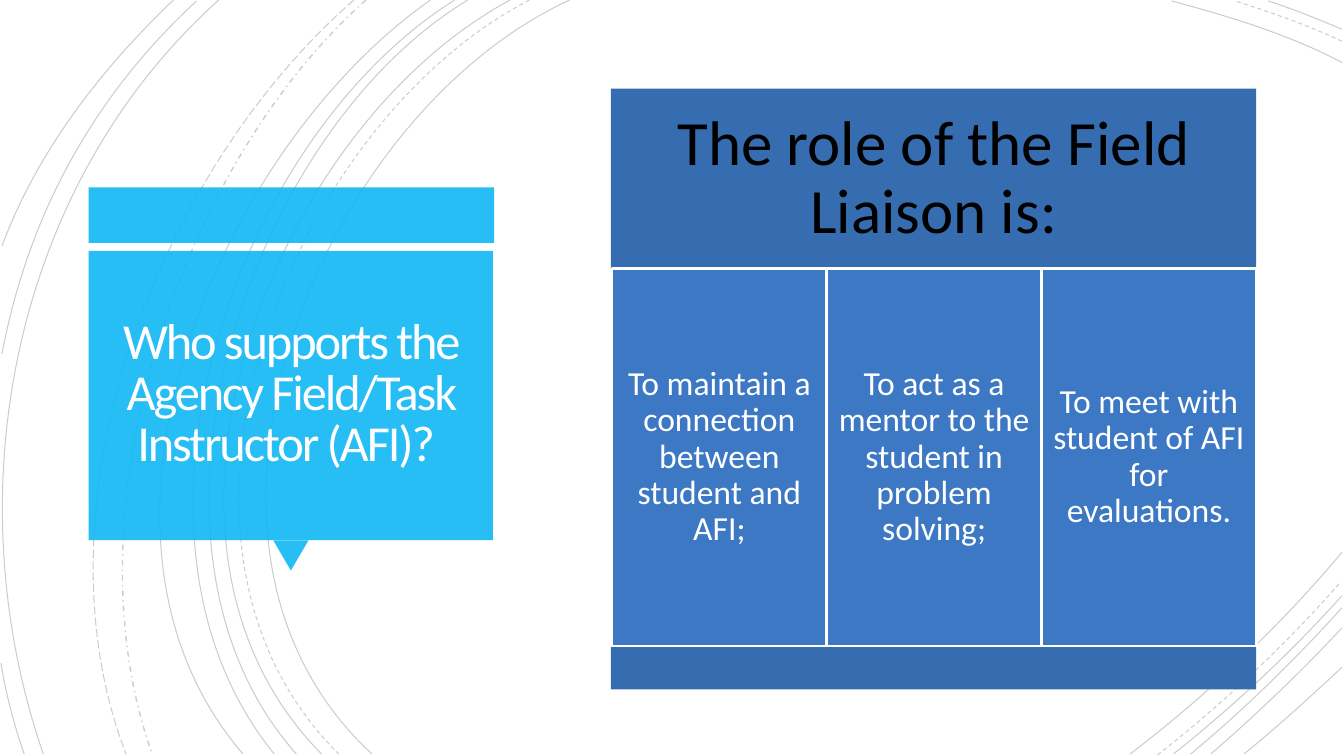
from dataclasses import dataclass

from lxml import etree
from pptx import Presentation
from pptx import util as u
from pptx.dml.color import RGBColor
from pptx.enum import dml, shapes, text
from pptx.oxml.ns import qn

# Grid: cells of one inch, 13.33 columns by 7.5 rows
COLUMNS, ROWS = 13.33, 7.5
CELL = u.Inches(1)
FONT = "Calibri"
COLOURS = {
    "arc": "000000",
    "callout": "10B6F4",
    "question": "FFFEFF",
    "band": "366DB1",
    "task": "3C78C3",
    "heading": "000000",
    "white": "FFFFFF",
}
SOLID, DASH = dml.MSO_LINE.SOLID, dml.MSO_LINE.DASH
LONG_DASH, DASH_DOT = dml.MSO_LINE.LONG_DASH, dml.MSO_LINE.DASH_DOT
RECTANGLE = shapes.MSO_SHAPE.RECTANGLE
TRIANGLE = shapes.MSO_SHAPE.ISOSCELES_TRIANGLE


@dataclass
class Arc:
    """Start, two control points and end, as column and row pairs."""
    points: tuple
    dash: dml.MSO_LINE = SOLID
    weight: float = 0.75


@dataclass
class Panel:
    column: float
    row: float
    columns: float
    rows: float
    fill: str
    kind: shapes.MSO_SHAPE = RECTANGLE
    opacity: int = 100
    rotation: int = 0
    outline: float = 0


@dataclass
class Wording:
    content: str
    size: int
    colour: str
    inset: float
    leading: float = 0.9
    tracking: float = 0


def cells(count: float) -> int:
    return round(count * CELL)


def rgb(name: str) -> RGBColor:
    return RGBColor.from_string(COLOURS[name])


def set_opacity(shape, percent: int) -> None:
    for colour in shape._element.spPr.iter(qn("a:srgbClr")):
        etree.SubElement(colour, qn("a:alpha")).set("val", str(percent * 1000))


def draw_arc(slide, arc: Arc) -> None:
    start, *rest = [(cells(x), cells(y)) for x, y in arc.points]
    builder = slide.shapes.build_freeform(*start)
    builder.add_line_segments(rest, close=False)
    shape = builder.convert_to_shape()
    # Join the three segments into one cubic curve
    segments = list(shape._element.iter(qn("a:lnTo")))
    outline = segments[0].getparent()
    curve = etree.SubElement(outline, qn("a:cubicBezTo"))
    for segment in segments:
        curve.append(segment[0])
        outline.remove(segment)
    shape.shadow.inherit = False
    shape.fill.background()
    shape.line.color.rgb = rgb("arc")
    shape.line.width = u.Pt(arc.weight)
    shape.line.dash_style = arc.dash
    set_opacity(shape, 20)


def draw_panel(slide, panel: Panel):
    shape = slide.shapes.add_shape(
        panel.kind, cells(panel.column), cells(panel.row),
        cells(panel.columns), cells(panel.rows))
    shape.shadow.inherit = False
    shape.rotation = panel.rotation
    shape.fill.solid()
    shape.fill.fore_color.rgb = rgb(panel.fill)
    if panel.opacity < 100:
        set_opacity(shape, panel.opacity)
    if panel.outline:
        shape.line.color.rgb = rgb("white")
        shape.line.width = u.Pt(panel.outline)
    else:
        shape.line.fill.background()
    return shape


def write(shape, wording: Wording) -> None:
    frame = shape.text_frame
    frame.word_wrap = True
    frame.vertical_anchor = text.MSO_ANCHOR.MIDDLE
    frame.margin_left = frame.margin_right = cells(wording.inset)
    frame.margin_top = frame.margin_bottom = cells(wording.inset)
    paragraph = frame.paragraphs[0]
    paragraph.alignment = text.PP_ALIGN.CENTER
    paragraph.line_spacing = wording.leading
    run = paragraph.add_run()
    run.text = wording.content
    run.font.name = FONT
    run.font.size = u.Pt(wording.size)
    run.font.color.rgb = rgb(wording.colour)
    if wording.tracking:
        run._r.get_or_add_rPr().set("spc", str(round(wording.tracking * 100)))


ARCS = [
    # Long arcs sweeping down the left half
    Arc(((5.65, 0), (3.15, 1.15), (1.43, 5.4), (3.69, 7.48))),
    Arc(((5.25, 0), (2.85, 1.25), (1.23, 5.37), (3.36, 7.48)), DASH),
    Arc(((5.06, 0), (2.7, 1.27), (1.1, 5.37), (3.19, 7.48))),
    Arc(((4.64, 0), (2.44, 1.33), (1.1, 5.41), (2.94, 7.48))),
    Arc(((4.51, 0), (2.31, 1.38), (0.97, 5.33), (2.72, 7.48))),
    Arc(((4.27, 0), (2.17, 1.47), (0.53, 5.29), (2.41, 7.48))),
    Arc(((3.63, 0), (1.76, 1.66), (0.65, 5.09), (1.51, 7.48)), DASH_DOT, 1),
    Arc(((3.51, 0), (1.57, 1.69), (0.29, 4.99), (1.25, 7.48)), LONG_DASH),
    Arc(((2.17, 0), (0.11, 1.85), (-0.46, 4.9), (0.43, 7.48))),
    # Short arcs at the left edge
    Arc(((1.95, 0.01), (0.92, 0.96), (0.28, 2.14), (0.02, 3.51))),
    Arc(((0.01, 6.58), (0.06, 6.89), (0.14, 7.19), (0.24, 7.48))),
    Arc(((1.72, 0), (1, 0.69), (0.37, 1.5), (0.02, 2.44))),
    # Top right corner
    Arc(((13.31, 0.62), (12.78, 0.34), (12.18, 0.16), (11.62, 0.01))),
    Arc(((13.31, 0.41), (12.97, 0.25), (12.6, 0.12), (12.25, 0.01)), DASH),
    Arc(((13.31, 0.29), (13.07, 0.19), (12.83, 0.09), (12.58, 0.01))),
    # Bottom right corner
    Arc(((11.21, 7.48), (11.97, 6.9), (12.69, 6.22), (13.31, 5.48))),
    Arc(((11.48, 7.49), (12.13, 6.98), (12.75, 6.4), (13.3, 5.77)), DASH),
    Arc(((11.64, 7.48), (12.23, 7.01), (12.8, 6.48), (13.31, 5.91))),
    Arc(((11.81, 7.48), (12.34, 7.04), (12.84, 6.55), (13.31, 6.03))),
    Arc(((12.01, 7.48), (12.46, 7.09), (12.9, 6.67), (13.31, 6.23))),
    Arc(((12.34, 7.48), (12.67, 7.21), (12.99, 6.92), (13.31, 6.62))),
]
CALLOUT = [
    Panel(0.88, 1.86, 4.02, 0.55, "callout", opacity=90),
    Panel(2.71, 5.36, 0.35, 0.3, "callout", TRIANGLE, 90, 180),
    Panel(0.88, 2.49, 4.01, 2.87, "callout", opacity=90),
]
# The trailing space shifts the centred last line slightly left
QUESTION = Wording("Who supports the Agency Field/Task Instructor (AFI)? ",
                   36, "question", 0.25, 0.85, -1.5)
HEADING = Wording("The role of the Field Liaison is:", 45, "heading", 0.19)
TASKS = [
    "To maintain a connection between student and AFI;",
    "To act as a mentor to the student in problem solving;",
    "To meet with student of AFI for evaluations.",
]
ROLE_COLUMN, ROLE_COLUMNS, TASK_COLUMNS = 6.06, 6.4, 2.13


def main() -> None:
    deck = Presentation()
    deck.slide_width, deck.slide_height = cells(COLUMNS), cells(ROWS)
    slide = deck.slides.add_slide(deck.slide_layouts[6])

    # Background arcs
    for arc in ARCS:
        draw_arc(slide, arc)

    # Question callout
    for panel in CALLOUT:
        draw_panel(slide, panel)
    question = slide.shapes.add_textbox(
        cells(0.97), cells(2.58), cells(3.83), cells(2.68))
    write(question, QUESTION)

    # Role of the liaison: heading, tasks, base
    heading = draw_panel(slide, Panel(ROLE_COLUMN, 0.88, ROLE_COLUMNS, 1.79, "band"))
    write(heading, HEADING)
    for index, content in enumerate(TASKS):
        left = ROLE_COLUMN + 0.01 + index * TASK_COLUMNS
        task = draw_panel(slide, Panel(left, 2.66, TASK_COLUMNS, 3.75, "task", outline=2))
        write(task, Wording(content, 24, "white", 0.1))
    draw_panel(slide, Panel(ROLE_COLUMN, 6.42, ROLE_COLUMNS, 0.42, "band"))

    deck.save("out.pptx")


if __name__ == "__main__":
    main()
